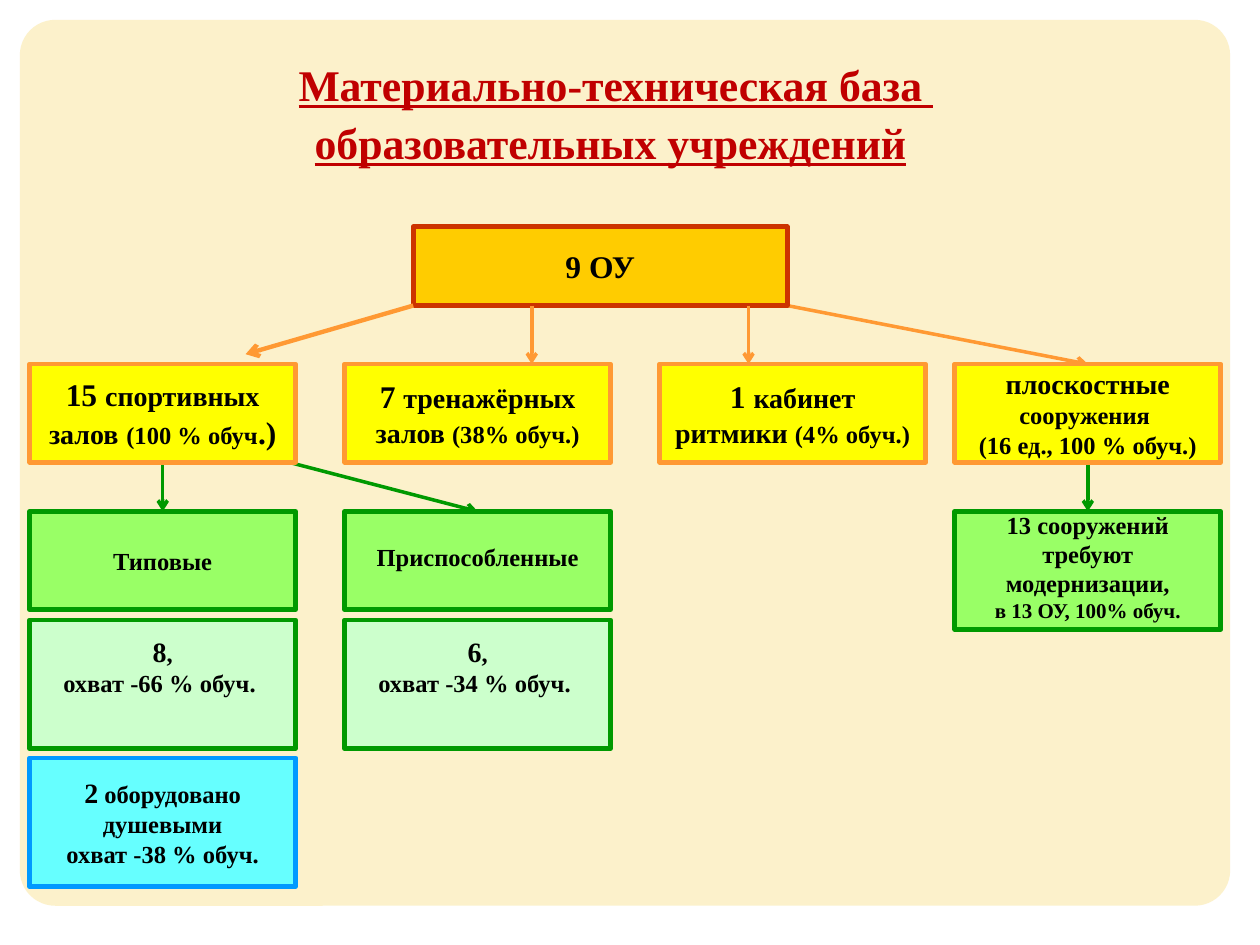
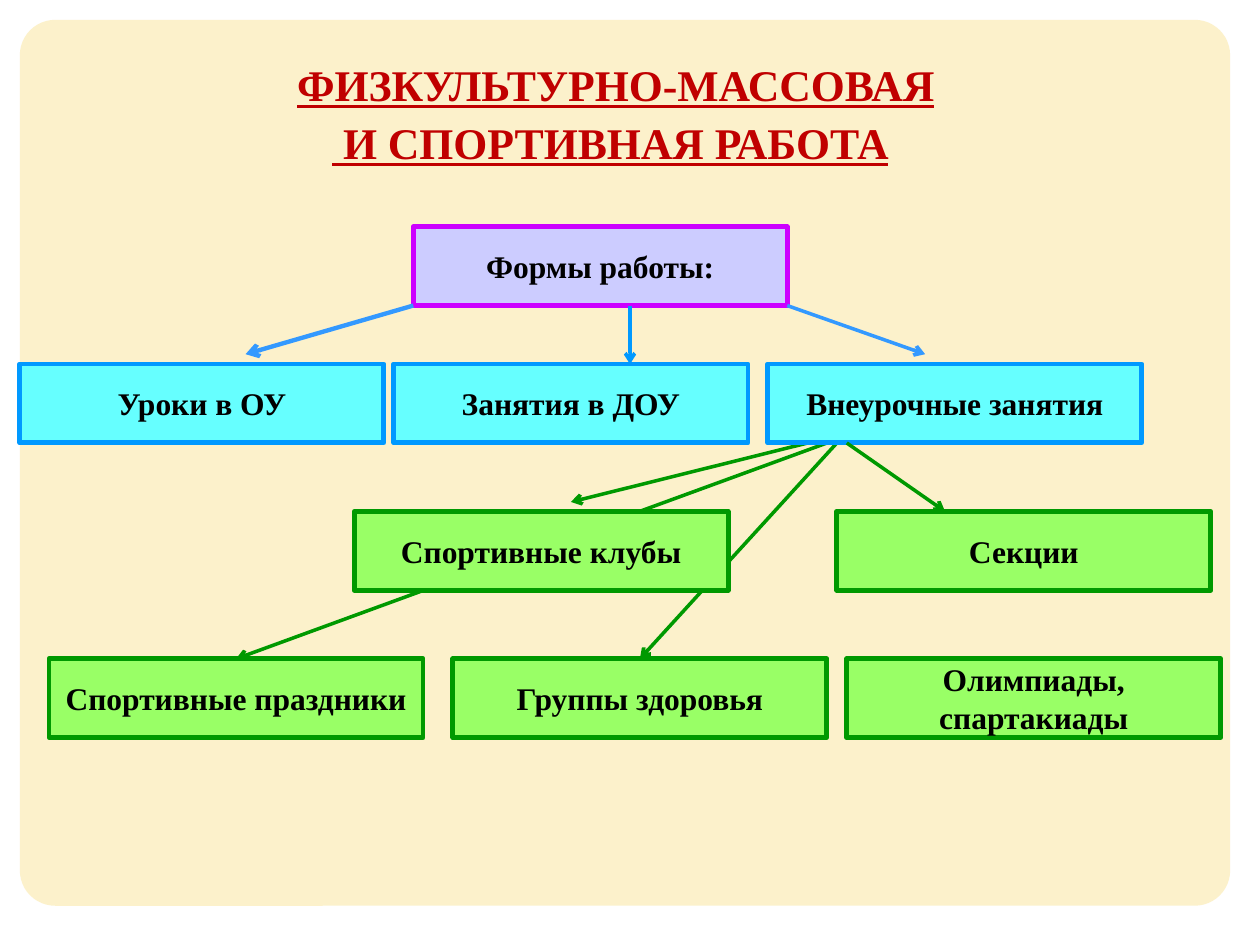
"""Builds two slides of box diagrams on school sports facilities and sports work."""
from lxml import etree
from pptx import Presentation
from pptx.dml.color import RGBColor
from pptx.enum.shapes import MSO_CONNECTOR, MSO_SHAPE
from pptx.enum.text import MSO_ANCHOR, MSO_AUTO_SIZE, PP_ALIGN
from pptx.oxml.ns import qn
from pptx.util import Cm, Pt

BLACK = RGBColor(0x00, 0x00, 0x00)
TITLE_RED = RGBColor(0xC0, 0x00, 0x00)
PANEL_CREAM = RGBColor(0xFA, 0xE6, 0x9C)
GOLD = RGBColor(0xFF, 0xCC, 0x00)
BRICK = RGBColor(0xCC, 0x33, 0x00)
YELLOW = RGBColor(0xFF, 0xFF, 0x00)
ORANGE = RGBColor(0xFF, 0x99, 0x33)
LIME = RGBColor(0x99, 0xFF, 0x66)
MINT = RGBColor(0xCC, 0xFF, 0xCC)
GREEN = RGBColor(0x00, 0x99, 0x00)
AQUA = RGBColor(0x66, 0xFF, 0xFF)
BLUE = RGBColor(0x00, 0x99, 0xFF)
SKY = RGBColor(0x33, 0x99, 0xFF)
LILAC = RGBColor(0xCC, 0xCC, 0xFF)
VIOLET = RGBColor(0xCC, 0x00, 0xFF)

BOX_FONT = {"name": "Times New Roman", "bold": True}
TITLE_FONT = {**BOX_FONT, "size": Pt(25)}
BOX_FRAME = {"word_wrap": True, "vertical_anchor": MSO_ANCHOR.MIDDLE}
TITLE_FRAME = {**BOX_FRAME, "auto_size": MSO_AUTO_SIZE.NONE, "margin_bottom": Cm(0.37)}
TITLE_PLACE = {"left": Cm(0), "top": Cm(0.76), "width": Cm(24.61), "height": Cm(3.18)}

ROOT_LEFT, ROOT_TOP = 8.33, 4.57
WIDE, LOW = 7.54, 1.59
ROOT_RIGHT, ROOT_BOTTOM = ROOT_LEFT + WIDE, ROOT_TOP + LOW
LEVEL_TOPS = (7.34, 10.31, 13.28)
COLUMNS = (0.6, 6.95, 13.3, 19.25)
COLUMN_WIDTH, COLUMN_HEIGHT, TALL = 5.36, 1.98, 2.59
TOP, BOTTOM = 0, 2


def set_attributes(target, values):
    """Set each named value on the target."""
    for name, value in values.items():
        setattr(target, name, value)


def add_run(paragraph, text, color, **values):
    """Append a formatted run to the paragraph."""
    run = paragraph.add_run()
    run.text = text
    set_attributes(run.font, values)
    run.font.color.rgb = color


def add_panel(slide, layout):
    """Place the rounded translucent panel on the shared layout."""
    panel = slide.shapes.add_shape(MSO_SHAPE.ROUNDED_RECTANGLE, Cm(0.4), Cm(0.4), Cm(24.4), Cm(17.86))
    panel.adjustments[0] = 0.04
    panel.shadow.inherit = False
    panel.line.fill.background()
    panel.fill.solid()
    panel.fill.fore_color.rgb = PANEL_CREAM
    color = panel.element.spPr.find(".//" + qn("a:srgbClr"))
    etree.SubElement(color, qn("a:alpha"), val="52000")
    layout.shapes.element.insert(2, panel.element)


def add_title(slide, first_line, second_line):
    """Fill and format the title placeholder."""
    title = slide.shapes.title
    set_attributes(title, TITLE_PLACE)
    set_attributes(title.text_frame, TITLE_FRAME)
    paragraph = title.text_frame.paragraphs[0]
    set_attributes(paragraph, {"alignment": PP_ALIGN.CENTER, "line_spacing": 1.1})
    add_run(paragraph, " ", BLACK, **TITLE_FONT)
    add_run(paragraph, first_line, TITLE_RED, underline=True, **TITLE_FONT)
    paragraph.add_line_break()
    add_run(paragraph, second_line, TITLE_RED, underline=True, **TITLE_FONT)


def add_box(slide, place, colors, paragraphs, bottom_margin=0.13):
    """Draw a bordered box; each paragraph is a list of text and size pairs."""
    box = slide.shapes.add_shape(MSO_SHAPE.RECTANGLE, *map(Cm, place))
    box.shadow.inherit = False
    fill_color, line_color = colors
    box.fill.solid()
    box.fill.fore_color.rgb = fill_color
    box.line.color.rgb = line_color
    box.line.width = Pt(2.75)
    frame = box.text_frame
    set_attributes(frame, {**BOX_FRAME, "margin_bottom": Cm(bottom_margin)})
    for index, runs in enumerate(paragraphs):
        paragraph = frame.add_paragraph() if index else frame.paragraphs[0]
        paragraph.alignment = PP_ALIGN.CENTER
        for text, size in runs:
            add_run(paragraph, text, BLACK, size=Pt(size), **BOX_FONT)
    return box


def add_label_box(slide, left, top, colors, text, width=WIDE):
    """Draw a low box with one 18-point label."""
    return add_box(slide, (left, top, width, LOW), colors, [[(text, 18)]])


def add_arrow(slide, start, end, color, width=2, behind=False, source=None, target=None):
    """Draw an arrow, joined to the source's bottom and target's top if given."""
    arrow = slide.shapes.add_connector(MSO_CONNECTOR.STRAIGHT, *map(Cm, (*start, *end)))
    arrow.line.color.rgb = color
    arrow.line.width = Pt(width)
    line = arrow.line._get_or_add_ln()
    etree.SubElement(line, qn("a:tailEnd"), type="arrow")
    etree.SubElement(arrow.element.spPr, qn("a:effectLst"))
    if source is not None:
        arrow.begin_connect(source, BOTTOM)
    if target is not None:
        arrow.end_connect(target, TOP)
    if behind:
        slide.shapes.element.insert(2, arrow.element)


def build_facilities(slide):
    """Build the diagram of sports facilities."""
    add_title(slide, "Материально-техническая база ", "образовательных учреждений")
    add_label_box(slide, ROOT_LEFT, ROOT_TOP, (GOLD, BRICK), "9 ОУ")
    facility_texts = (
        [[("15 ", 18), ("спортивных залов", 16), (" ", 18), ("(100 % обуч", 14), (".)", 18)]],
        [[("7 ", 18), ("тренажёрных залов ", 16), ("(38% обуч.)", 14)]],
        [[("1 ", 18), ("кабинет ритмики ", 16), ("(4% обуч.)", 14)]],
        [[("плоскостные", 16)], [("сооружения ", 14)], [("(16 ед., 100 % обуч.)", 14)]],
    )
    facilities = [
        add_box(slide, (left, LEVEL_TOPS[0], COLUMN_WIDTH, COLUMN_HEIGHT), (YELLOW, ORANGE), text)
        for left, text in zip(COLUMNS, facility_texts)
    ]
    gyms, grounds = facilities[0], facilities[-1]
    detail_boxes = (
        (COLUMNS[0], COLUMN_HEIGHT, [[("Типовые", 14)]], 0.13),
        (COLUMNS[1], COLUMN_HEIGHT, [[("Приспособленные", 14)]], 0.29),
        (COLUMNS[3], 2.38, [[("13 сооружений требуют модернизации,", 14)],
                            [("в 13 ОУ, 100% обуч.", 12)]], 0.29),
    )
    standard, adapted, repairs = [
        add_box(slide, (left, LEVEL_TOPS[1], COLUMN_WIDTH, height), (LIME, GREEN), text, margin)
        for left, height, text, margin in detail_boxes
    ]
    for left, count, coverage in zip(COLUMNS, ("8", "6"), (66, 34)):
        add_box(slide, (left, 12.5, COLUMN_WIDTH, TALL), (MINT, GREEN),
                [[(count, 16), (",", 14)], [(f"охват -{coverage} % обуч. ", 14)]], 0.87)
    add_box(slide, (COLUMNS[0], 15.28, COLUMN_WIDTH, TALL), (AQUA, BLUE),
            [[("2", 16), (" оборудовано душевыми", 14)], [("охват -38 % обуч.", 14)]])

    detail_top = LEVEL_TOPS[1]
    add_arrow(slide, (3.28, 9.32), (3.28, detail_top), GREEN, behind=True, source=gyms, target=standard)
    add_arrow(slide, (4.37, 8.94), (9.63, detail_top), GREEN, behind=True, target=adapted)
    add_arrow(slide, (21.93, 9.32), (21.93, detail_top), GREEN, behind=True, source=grounds, target=repairs)
    add_arrow(slide, (ROOT_RIGHT, ROOT_BOTTOM), (21.93, LEVEL_TOPS[0]), ORANGE, behind=True, target=grounds)
    add_arrow(slide, (ROOT_LEFT, ROOT_BOTTOM), (4.95, 7.14), ORANGE, width=2.5)
    for x in (10.72, 15.09):
        add_arrow(slide, (x, ROOT_BOTTOM), (x, LEVEL_TOPS[0]), ORANGE)


def build_activities(slide):
    """Build the diagram of forms of sports work."""
    add_title(slide, "ФИЗКУЛЬТУРНО-МАССОВАЯ", " И СПОРТИВНАЯ РАБОТА")
    add_label_box(slide, ROOT_LEFT, ROOT_TOP, (LILAC, VIOLET), "Формы работы:")
    form_boxes = (
        (0.4, 7.34, "Уроки в ОУ"),
        (7.94, 7.14, "Занятия в ДОУ"),
        (15.48, WIDE, "Внеурочные занятия"),
    )
    for left, width, text in form_boxes:
        add_label_box(slide, left, LEVEL_TOPS[0], (AQUA, BLUE), text, width)
    activity_boxes = (
        (7.14, LEVEL_TOPS[1], "Спортивные клубы"),
        (16.87, LEVEL_TOPS[1], "Секции"),
        (0.99, LEVEL_TOPS[2], "Спортивные праздники"),
        (9.13, LEVEL_TOPS[2], "Группы здоровья"),
        (17.07, LEVEL_TOPS[2], "Олимпиады, спартакиады"),
    )
    clubs, sections, festivals, health_groups, contests = [
        add_label_box(slide, left, top, (LIME, GREEN), text) for left, top, text in activity_boxes
    ]

    forms_bottom = LEVEL_TOPS[0] + LOW
    add_arrow(slide, (16.67, forms_bottom), (4.76, LEVEL_TOPS[2]), GREEN, behind=True, target=festivals)
    add_arrow(slide, (16.28, forms_bottom), (11.51, 10.12), GREEN, behind=True)
    add_arrow(slide, (16.87, forms_bottom), (12.9, LEVEL_TOPS[2]), GREEN, behind=True, target=health_groups)
    add_arrow(slide, (17.07, forms_bottom), (19.05, LEVEL_TOPS[1]), GREEN)
    add_arrow(slide, (ROOT_LEFT, ROOT_BOTTOM), (4.95, 7.14), SKY, width=2.5)
    add_arrow(slide, (ROOT_RIGHT, ROOT_BOTTOM), (18.65, 7.14), SKY)
    add_arrow(slide, (12.7, ROOT_BOTTOM), (12.7, LEVEL_TOPS[0]), BLUE)


def main():
    """Create and save the presentation."""
    presentation = Presentation()
    presentation.slide_width, presentation.slide_height = Cm(25.4), Cm(19.05)
    layout = presentation.slide_layouts.get_by_name("Title Only")
    builders = (build_facilities, build_activities)
    slides = [presentation.slides.add_slide(layout) for _ in builders]
    add_panel(slides[0], layout)
    for build, slide in zip(builders, slides):
        build(slide)
    presentation.save("out.pptx")


if __name__ == "__main__":
    main()
